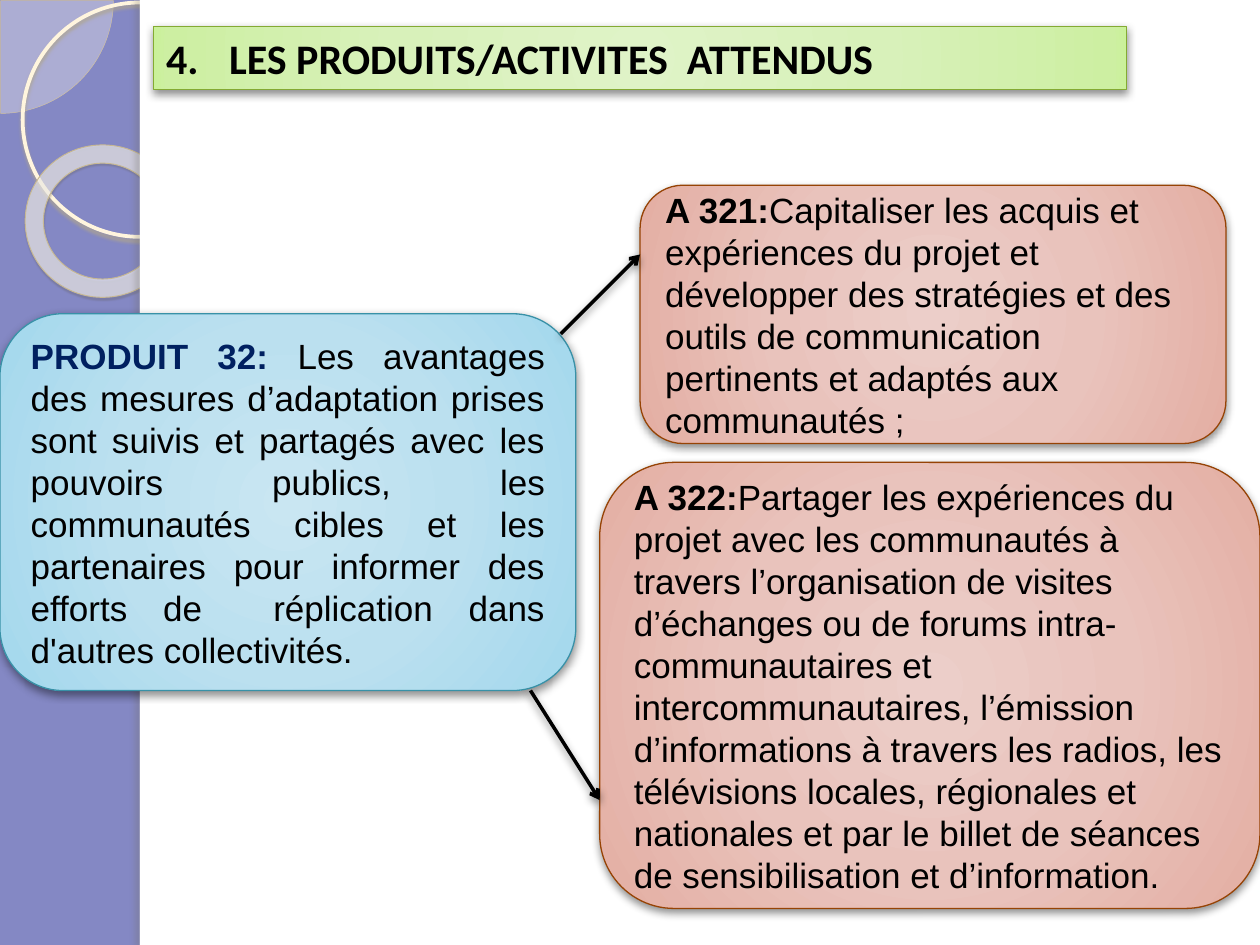
from lxml.etree import SubElement
from pptx import Presentation
from pptx.dml.color import RGBColor
from pptx.enum.shapes import MSO_CONNECTOR as Connector, MSO_SHAPE as Shape
from pptx.enum.text import MSO_ANCHOR as Anchor, PP_ALIGN as Align
from pptx.oxml.ns import qn
from pptx.util import Inches, Pt

WIDTH, HEIGHT = 10, 7.5
BAND = 1.11
BLACK, WHITE, NAVY, LAVENDER = "000000", "FFFFFF", "002060", "8488C4"
SHADOW = (BLACK, 43, 5, 2, 90)
STOPS = (0, 50, 97, 100)
GREEN = (("DFF3C7", "D8F1BA", "CDEFA2", "CAF199"), "84AA33")
BLUE = (("C9E6F2", "BBE0EF", "A4D8ED", "9BD7EE"), "3891A7")
RED = (("ECCEC9", "E9C3BC", "E4AFA4", "E4A89B"), "964305")

TITLE = "LES PRODUITS/ACTIVITES  ATTENDUS"
CARDS = [
    ((5.08, 1.47, 4.65, 2.05), RED, BLACK, Align.LEFT, "A 321:",
     "Capitaliser les acquis et expériences du projet et développer des stratégies "
     "et des outils de communication pertinents et adaptés aux communautés ;"),
    ((0, 2.49, 4.57, 2.99), BLUE, NAVY, Align.JUSTIFY, "PRODUIT 32: ",
     "Les avantages des mesures d’adaptation prises sont suivis et partagés avec les "
     "pouvoirs publics, les communautés cibles et les partenaires pour informer des "
     "efforts de  réplication dans d'autres collectivités."),
    ((4.76, 3.67, 5.24, 3.54), RED, BLACK, Align.LEFT, "A 322:",
     "Partager les expériences du projet avec les communautés à travers "
     "l’organisation de visites d’échanges ou de forums intra-communautaires et "
     "intercommunautaires, l’émission d’informations à travers les radios, les "
     "télévisions locales, régionales et nationales et par le billet de séances de "
     "sensibilisation et d’information."),
]
ARROWS = [((4.45, 2.65), (5.08, 2.02)), ((4.21, 5.48), (4.76, 6.35))]


def color(value):
    return RGBColor.from_string(value)


def element(parent, tag, **attributes):
    return SubElement(parent, qn(tag), {key: str(value) for key, value in attributes.items()})


def add_shadow(effects, value, alpha, blur, distance, angle):
    shadow = element(effects, "a:outerShdw", blurRad=Pt(blur), dist=Pt(distance),
                     dir=angle * 60000, algn="ctr", rotWithShape=0)
    element(element(shadow, "a:srgbClr", val=value), "a:alpha", val=alpha * 1000)


def set_gradient(shape, colors):
    properties = shape.fill._xPr
    gradient = element(properties, "a:gradFill", rotWithShape=1)
    stops = element(gradient, "a:gsLst")
    for position, value in zip(STOPS, colors):
        element(element(stops, "a:gs", pos=position * 1000), "a:srgbClr", val=value)
    center = element(gradient, "a:path", path="circle")
    element(center, "a:fillToRect", l=50000, t=50000, r=50000, b=50000)
    properties.find(qn("a:prstGeom")).addnext(gradient)


def add_shape(slide, kind, box, fill=None, alpha=100, line=None, weight=0.75, shadow=None):
    shape = slide.shapes.add_shape(kind, *map(Inches, box))
    if isinstance(fill, tuple):
        set_gradient(shape, fill)
    elif fill:
        shape.fill.solid()
        shape.fill.fore_color.rgb = color(fill)
        element(shape.fill._xPr.find(qn("a:solidFill"))[0], "a:alpha", val=alpha * 1000)
    else:
        shape.fill.background()
    if line:
        shape.line.color.rgb = color(line)
        shape.line.width = Pt(weight)
    else:
        shape.line.fill.background()
    shape.shadow.inherit = False
    if shadow:
        add_shadow(shape._element.spPr.find(qn("a:effectLst")), *shadow)
    return shape


def add_run(paragraph, text, size=20, font="Arial", bold=False, value=BLACK):
    run = paragraph.add_run()
    run.text = text
    run.font.size, run.font.name, run.font.bold = Pt(size), font, bold
    run.font.color.rgb = color(value)


def first_paragraph(shape, align):
    frame = shape.text_frame
    frame.word_wrap, frame.vertical_anchor = True, Anchor.MIDDLE
    paragraph = frame.paragraphs[0]
    paragraph.alignment = align
    return paragraph


def add_arrow(slide, start, end):
    arrow = slide.shapes.add_connector(Connector.STRAIGHT, *map(Inches, start + end))
    arrow.line.color.rgb = color(BLACK)
    arrow.line.width = Pt(2)
    element(arrow.line._get_or_add_ln(), "a:tailEnd", type="arrow")
    add_shadow(element(arrow._element.spPr, "a:effectLst"), *SHADOW)


def add_decoration(slide):
    slide.background.fill.solid()
    slide.background.fill.fore_color.rgb = color(LAVENDER)
    pie = add_shape(slide, Shape.PIE, (-0.89, -0.89, 1.79, 1.79), "FEFAF4", 33, "D3C39F", 0.25)
    pie.adjustments[0], pie.adjustments[1] = 0, 54
    add_shape(slide, Shape.OVAL, (0.18, 0.02, 1.86, 1.86), line="FFF5DE", weight=2.15,
              shadow=("B0A68F", 85, 2, 2, 90))
    ring = add_shape(slide, Shape.DONUT, (0.2, 1.15, 1.23, 1.21), "FFFDF8", 60, "C7B893", 0.58,
                     ("5A5444", 35, 1, 1.2, 75))
    ring.adjustments[0] = 0.12
    add_shape(slide, Shape.RECTANGLE, (BAND, 0, WIDTH - BAND, HEIGHT), WHITE)
    add_shape(slide, Shape.RECTANGLE, (BAND, 0, 0.08, HEIGHT), WHITE,
              shadow=("736F63", 25, 3, 3, 180))


def add_title(slide):
    fill, line = GREEN
    title = add_shape(slide, Shape.RECTANGLE, (1.22, 0.21, 7.72, 0.5), fill, line=line,
                      shadow=SHADOW)
    paragraph = first_paragraph(title, Align.LEFT)
    add_run(paragraph, TITLE, size=24, font="Calibri", bold=True)
    properties = paragraph._p.get_or_add_pPr()
    properties.set("marL", str(Inches(0.5)))
    properties.set("indent", str(-Inches(0.5)))
    element(properties, "a:buFont", typeface="+mj-lt")
    element(properties, "a:buAutoNum", type="arabicPeriod", startAt=4)


def main():
    presentation = Presentation()
    presentation.slide_width, presentation.slide_height = Inches(WIDTH), Inches(HEIGHT)
    slide = presentation.slides.add_slide(presentation.slide_layouts[6])
    add_decoration(slide)
    for box, (fill, line), label_color, align, label, text in CARDS:
        card = add_shape(slide, Shape.ROUNDED_RECTANGLE, box, fill, line=line, shadow=SHADOW)
        paragraph = first_paragraph(card, align)
        add_run(paragraph, label, bold=True, value=label_color)
        add_run(paragraph, text)
    for start, end in ARROWS:
        add_arrow(slide, start, end)
    add_title(slide)
    presentation.save("out.pptx")


if __name__ == "__main__":
    main()
